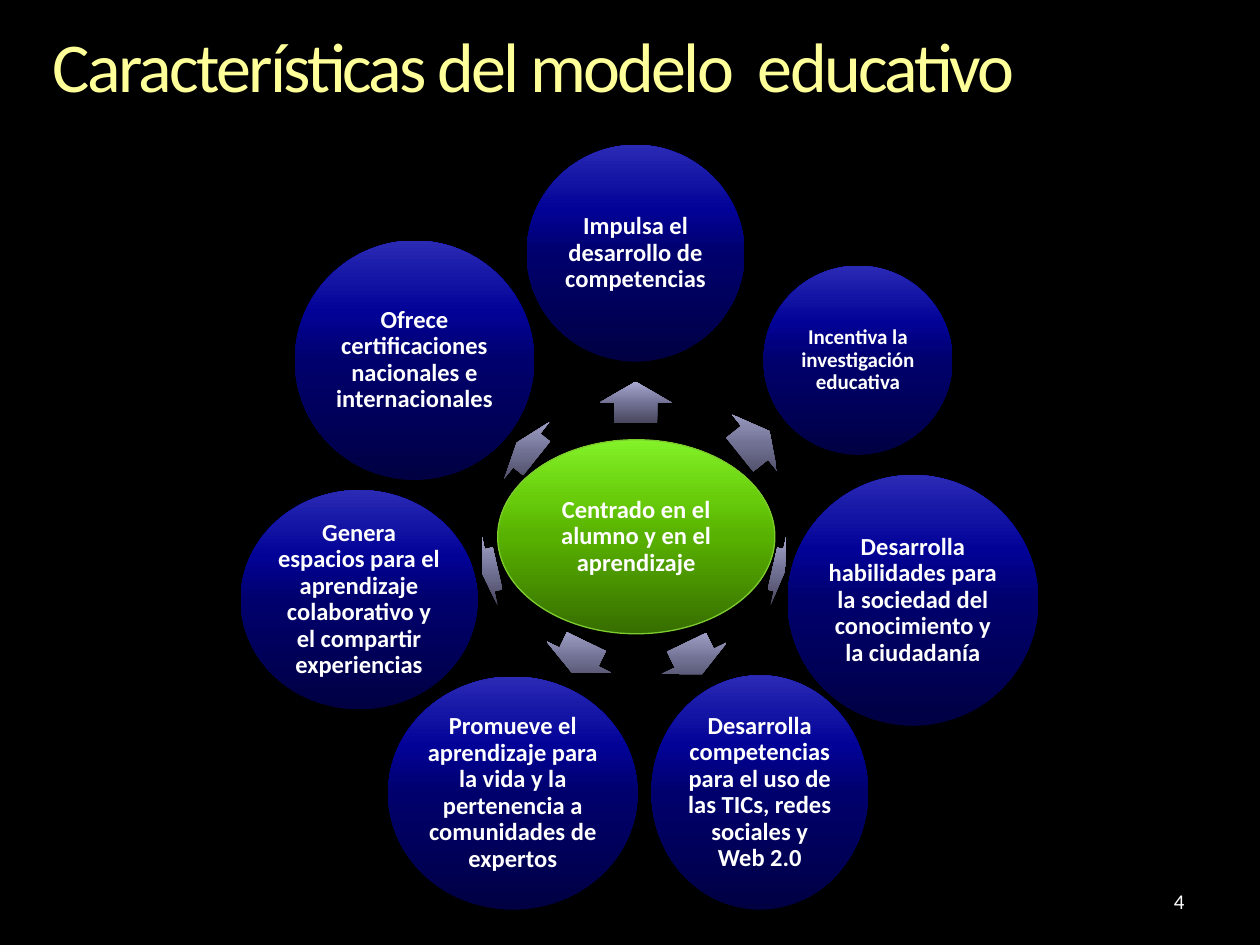
from dataclasses import dataclass

from lxml.etree import SubElement
from pptx import Presentation
from pptx.dml.color import RGBColor
from pptx.enum.shapes import MSO_SHAPE
from pptx.enum.text import MSO_ANCHOR, MSO_AUTO_SIZE, PP_ALIGN
from pptx.oxml.ns import qn
from pptx.util import Inches, Pt

COLS, ROWS = 100, 75


@dataclass(frozen=True)
class Theme:
    font: str = "Calibri"
    back: str = "000000"
    title: str = "FFFF99"
    text: str = "FFFFFF"
    rim: str = "7DCC2E"
    green: tuple = ("376E00", "58B100", "68CC0B", "83F229")
    blue: tuple = ("000043", "00006D", "020297", "2A2AB5")
    gray: tuple = ("46465D", "727295", "8888AD", "A9A9D3")
    stops: tuple = (0, 50, 70, 100)
    head: int = 40
    body: int = 14
    small: int = 12


class Deck:
    def __init__(self, theme):
        self.theme = theme
        self.prs = Presentation()
        self.prs.slide_width, self.prs.slide_height = Inches(10), Inches(7.5)
        self.slide = self.prs.slides.add_slide(self.prs.slide_layouts[5])
        fill = self.slide.background.fill
        fill.solid()
        fill.fore_color.rgb = RGBColor.from_string(theme.back)

    def box(self, left, top, wide, high):
        """Turn grid columns and rows into slide lengths."""
        col, row = self.prs.slide_width / COLS, self.prs.slide_height / ROWS
        return [round(v) for v in (left * col, top * row, wide * col, high * row)]

    def label(self, shape, text, size, color, align, bold=False, inset=None, lead=None):
        frame = shape.text_frame
        frame.word_wrap = True
        frame.auto_size = MSO_AUTO_SIZE.NONE
        frame.vertical_anchor = MSO_ANCHOR.MIDDLE
        if inset is not None:
            frame.margin_left = frame.margin_right = Inches(inset)
            frame.margin_top = frame.margin_bottom = Inches(inset)
        para = frame.paragraphs[0]
        para.text = text
        para.alignment = align
        if lead:
            para.line_spacing = lead
        font = para.font
        font.name, font.size, font.bold = self.theme.font, Pt(size), bold
        font.color.rgb = RGBColor.from_string(color)
        return para

    def title(self, text, *area):
        shape = self.slide.shapes.title
        shape.left, shape.top, shape.width, shape.height = self.box(*area)
        para = self.label(shape, text, self.theme.head, self.theme.title,
                          PP_ALIGN.LEFT, inset=0, lead=0.9)
        para.runs[0]._r.get_or_add_rPr().set("spc", "-150")

    def shade(self, shape, colors):
        """Fill from the bottom up, with a gradient that stays upright."""
        shape.shadow.inherit = False
        shape.fill.gradient()
        shape.fill.gradient_angle = 90
        grad = shape._element.spPr.find(qn("a:gradFill"))
        grad.set("rotWithShape", "0")
        stops = grad.find(qn("a:gsLst"))
        for old in list(stops):
            stops.remove(old)
        for place, color in zip(self.theme.stops, colors):
            stop = SubElement(stops, qn("a:gs"), pos=str(place * 1000))
            SubElement(stop, qn("a:srgbClr"), val=color)

    def oval(self, text, area, colors, size=None, rim=None):
        shape = self.slide.shapes.add_shape(MSO_SHAPE.OVAL, *self.box(*area))
        self.shade(shape, colors)
        if rim:
            shape.line.color.rgb = RGBColor.from_string(rim)
            shape.line.width = Pt(0.75)
        else:
            shape.line.fill.background()
        self.label(shape, text, size or self.theme.body, self.theme.text,
                   PP_ALIGN.CENTER, bold=True, inset=0.02, lead=0.9)

    def arrow(self, area, turn):
        shape = self.slide.shapes.add_shape(MSO_SHAPE.RIGHT_ARROW, *self.box(*area))
        shape.adjustments[0], shape.adjustments[1] = 0.6, 0.5
        shape.rotation = turn
        self.shade(shape, self.theme.gray)
        shape.line.fill.background()

    def number(self, text, *area):
        shape = self.slide.shapes.add_textbox(*self.box(*area))
        self.label(shape, text, self.theme.small, self.theme.text, PP_ALIGN.RIGHT)


# Clockwise from the top: text, oval area, arrow left, top and length, text size
SPOKES = [
    ("Impulsa el desarrollo de competencias",
     (41.8, 11.5, 17.3, 17.2), (48.8, 29.1, 3.3), None),
    ("Incentiva la investigación educativa",
     (60.6, 21.1, 15, 15), (58.4, 32.3, 3), Theme.small),
    ("Desarrolla habilidades para la sociedad del conocimiento y la ciudadanía",
     (62.5, 37.7, 19.9, 19.9), (61.3, 42.4, 1), None),
    ("Desarrolla competencias para el uso de las TICs, redes sociales y Web 2.0",
     (51.7, 53.6, 17.2, 18.6), (53.7, 49.4, 2.8), None),
    ("Promueve el aprendizaje para la vida y la pertenencia a comunidades de expertos",
     (30.8, 53.7, 19.8, 18.5), (44.6, 49.3, 2.7), None),
    ("Genera espacios para el aprendizaje colaborativo y el compartir experiencias",
     (19.1, 38.9, 18.8, 17.4), (38.2, 42.4, 1.3), None),
    ("Ofrece certificaciones nacionales e internacionales",
     (23.4, 19.1, 19, 19), (40.8, 32.9, 2), None),
]
THICK = 5.7


def main():
    theme = Theme()
    deck = Deck(theme)
    deck.title("Características del modelo  educativo", 4.2, 2.5, 91.7, 6.1)
    deck.oval("Centrado en el alumno y en el aprendizaje", (39.5, 34.9, 22, 15.4),
              theme.green, rim=theme.rim)
    for i, (text, area, arrow, size) in enumerate(SPOKES):
        deck.arrow((*arrow, THICK), (270 + i * 360 / len(SPOKES)) % 360)
        deck.oval(text, area, theme.blue, size)
    deck.number("4", 71.7, 69.5, 23.3, 4)
    deck.prs.save("out.pptx")


if __name__ == "__main__":
    main()
